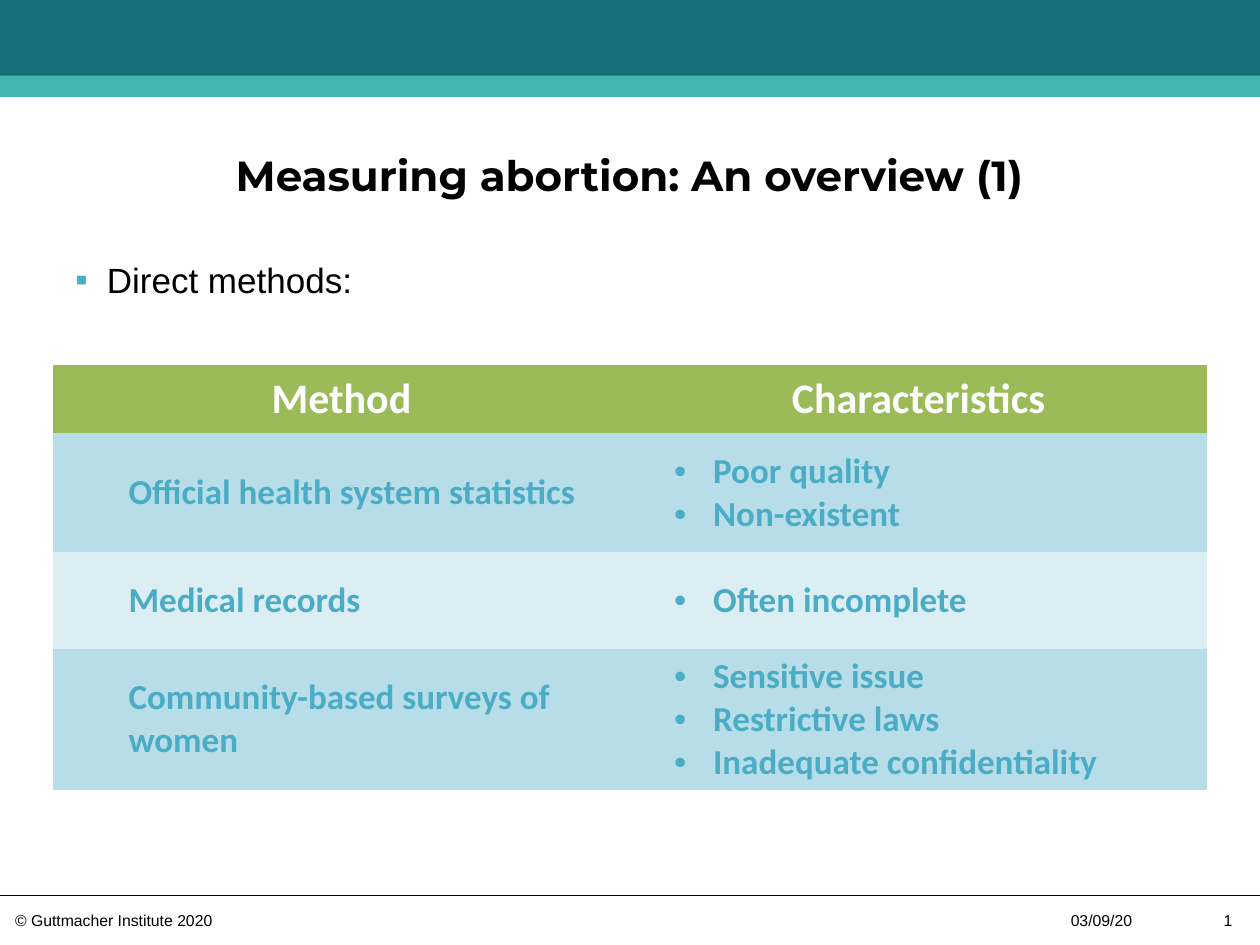
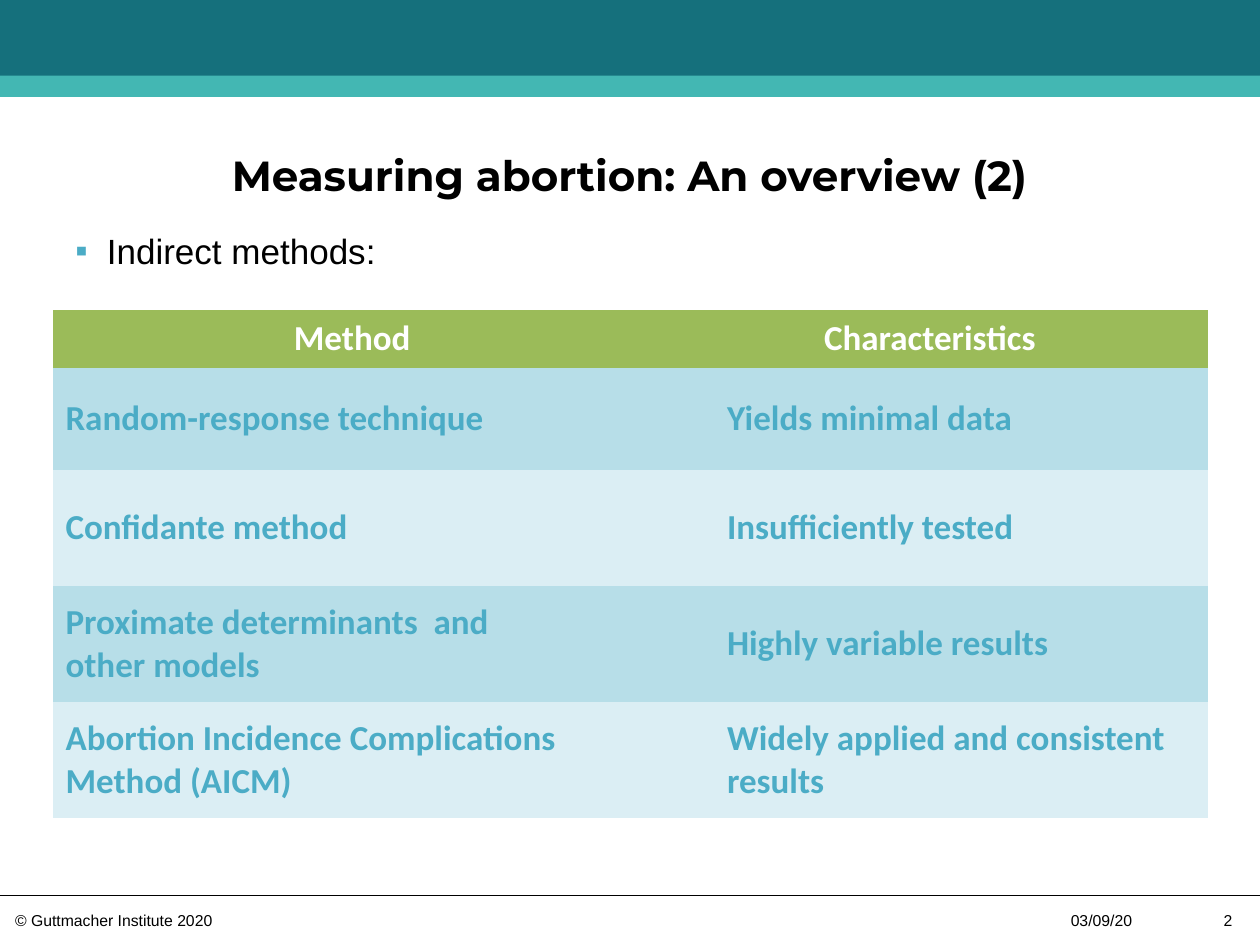
from lxml import etree
from pptx import Presentation
from pptx.dml.color import RGBColor
from pptx.enum.shapes import MSO_CONNECTOR, MSO_SHAPE
from pptx.enum.text import MSO_ANCHOR, PP_ALIGN
from pptx.oxml.ns import qn
from pptx.util import Inches, Pt

COLORS = {
    "black": "000000", "white": "FFFFFF",
    "band": "15707C", "stripe": "43B7B3",
    "header": "9BBB59", "accent": "4BACC6",
    "row_dark": "B7DEE8", "row_light": "DBEEF4",
}
NO_TABLE_STYLE = "{2D5ABB26-0587-4C30-8999-92F81FD0307C}"
COPYRIGHT = "© Guttmacher Institute 2020"
DATE = "03/09/20"
HEADERS = ("Method", "Characteristics")

# Cells hold a list of paragraphs; each column has its own paragraph format.
INDENTED = dict(margin=0.5)
BULLETED = dict(margin=0.56, hang=0.31, bullet="•")
SLIDES = [
    dict(
        title="Measuring abortion: An overview (1)",
        lead="Direct methods:", lead_box=(0.5, 2, 9, 5.25),
        table_top=2.9, header_size=24,
        col_widths=(4.58, 4.58), row_heights=(0.54, 0.94, 0.77, 1.12),
        col_formats=(INDENTED, BULLETED),
        rows=[
            (["Official health system statistics"],
             ["Poor quality", "Non-existent"]),
            (["Medical records"], ["Often incomplete"]),
            (["Community-based surveys of women"],
             ["Sensitive issue", "Restrictive laws",
              "Inadequate confidentiality"]),
        ],
    ),
    dict(
        title="Measuring abortion: An overview (2)",
        lead="Indirect methods:", lead_box=(0.5, 1.77, 9.08, 5.25),
        table_top=2.46, header_size=20,
        col_widths=(4.75, 4.42), row_heights=(0.46, 0.81, 0.92, 0.92, 0.92),
        col_formats=({}, INDENTED),
        rows=[
            (["Random-response technique"], ["Yields minimal data"]),
            (["Confidante method"], ["Insufficiently tested"]),
            (["Proximate determinants  and", "other models"],
             ["Highly variable results"]),
            (["Abortion Incidence Complications Method (AICM)"],
             ["Widely applied and consistent results"]),
        ],
    ),
]


def rgb(name):
    return RGBColor.from_string(COLORS[name])


def write(tf, lines, size=20, font="Arial", color="black", bold=False,
          align=PP_ALIGN.LEFT, margin=0, hang=0, bullet=None):
    """Fill a text frame, one paragraph per line; margin and hang in inches."""
    tf.word_wrap = True
    for i, line in enumerate(lines):
        p = tf.paragraphs[0] if i == 0 else tf.add_paragraph()
        p.alignment = align
        pPr = p._p.get_or_add_pPr()
        pPr.set("marL", str(Inches(margin)))
        pPr.set("indent", str(-Inches(hang)))
        if bullet:
            clr = etree.SubElement(pPr, qn("a:buClr"))
            etree.SubElement(clr, qn("a:srgbClr"), val=COLORS["accent"])
            etree.SubElement(pPr, qn("a:buFont"), typeface="Arial")
            etree.SubElement(pPr, qn("a:buChar"), char=bullet)
        else:
            etree.SubElement(pPr, qn("a:buNone"))
        r = p.add_run()
        r.text = line
        r.font.size, r.font.name, r.font.bold = Pt(size), font, bold
        r.font.color.rgb = rgb(color)


def add_text(slide, box, text, inset=True, **fmt):
    tf = slide.shapes.add_textbox(*map(Inches, box)).text_frame
    if not inset:
        clear_insets(tf)
    write(tf, [text], **fmt)


def clear_insets(tf):
    tf.margin_left = tf.margin_right = tf.margin_top = tf.margin_bottom = 0


def add_frame(slide, number):
    """Draw the top bands, the footer rule and the footer texts."""
    for top, height, color in ((0, 0.77, "band"), (0.6, 0.17, "stripe")):
        sp = slide.shapes.add_shape(MSO_SHAPE.RECTANGLE, 0, Inches(top),
                                    Inches(10), Inches(height))
        sp.shadow.inherit = False
        sp.fill.solid()
        sp.fill.fore_color.rgb = rgb(color)
        sp.line.fill.background()
    rule = slide.shapes.add_connector(MSO_CONNECTOR.STRAIGHT, 0, Inches(7.11),
                                      Inches(10), Inches(7.11))
    rule.line.color.rgb = rgb("black")
    rule.line.width = Pt(0.75)
    etree.SubElement(rule._element.spPr, qn("a:effectLst"))
    add_text(slide, (0.12, 7.23, 1.84, 0.15), COPYRIGHT, inset=False, size=9)
    add_text(slide, (8.4, 7.18, 0.76, 0.25), DATE, size=9)
    add_text(slide, (9.43, 7.18, 0.45, 0.25), str(number), size=9,
             align=PP_ALIGN.RIGHT)


def set_title(slide, text):
    title = slide.shapes.title
    title.left, title.top = Inches(1.12), Inches(0.84)
    title.width, title.height = Inches(7.75), Inches(0.75)
    tf = title.text_frame
    clear_insets(tf)
    tf.vertical_anchor = MSO_ANCHOR.BOTTOM
    write(tf, [text], size=24, font="Montserrat", bold=True,
          align=PP_ALIGN.CENTER)


def fill_cell(cell, fill, lines, **fmt):
    cell.fill.solid()
    cell.fill.fore_color.rgb = rgb(fill)
    cell.vertical_anchor = MSO_ANCHOR.MIDDLE
    write(cell.text_frame, lines, font="Calibri", bold=True, **fmt)


def add_methods_table(slide, data):
    widths, heights = data["col_widths"], data["row_heights"]
    table = slide.shapes.add_table(
        len(heights), len(widths), Inches(0.42), Inches(data["table_top"]),
        Inches(sum(widths)), Inches(sum(heights))).table
    table._tbl.tblPr.find(qn("a:tableStyleId")).text = NO_TABLE_STYLE
    for col, width in zip(table.columns, widths):
        col.width = Inches(width)
    for row, height in zip(table.rows, heights):
        row.height = Inches(height)
    for c, header in enumerate(HEADERS):
        fill_cell(table.cell(0, c), "header", [header], color="white",
                  size=data["header_size"], align=PP_ALIGN.CENTER)
    for r, row in enumerate(data["rows"], 1):
        fill = "row_dark" if r % 2 else "row_light"
        for c, (lines, fmt) in enumerate(zip(row, data["col_formats"])):
            fill_cell(table.cell(r, c), fill, lines, color="accent", **fmt)


def main():
    prs = Presentation()
    prs.slide_width, prs.slide_height = Inches(10), Inches(7.5)
    for number, data in enumerate(SLIDES, 1):
        slide = prs.slides.add_slide(prs.slide_layouts[5])
        add_frame(slide, number)
        set_title(slide, data["title"])
        add_text(slide, data["lead_box"], data["lead"],
                 margin=0.25, hang=0.25, bullet="▪")
        add_methods_table(slide, data)
    prs.save("out.pptx")


if __name__ == "__main__":
    main()
